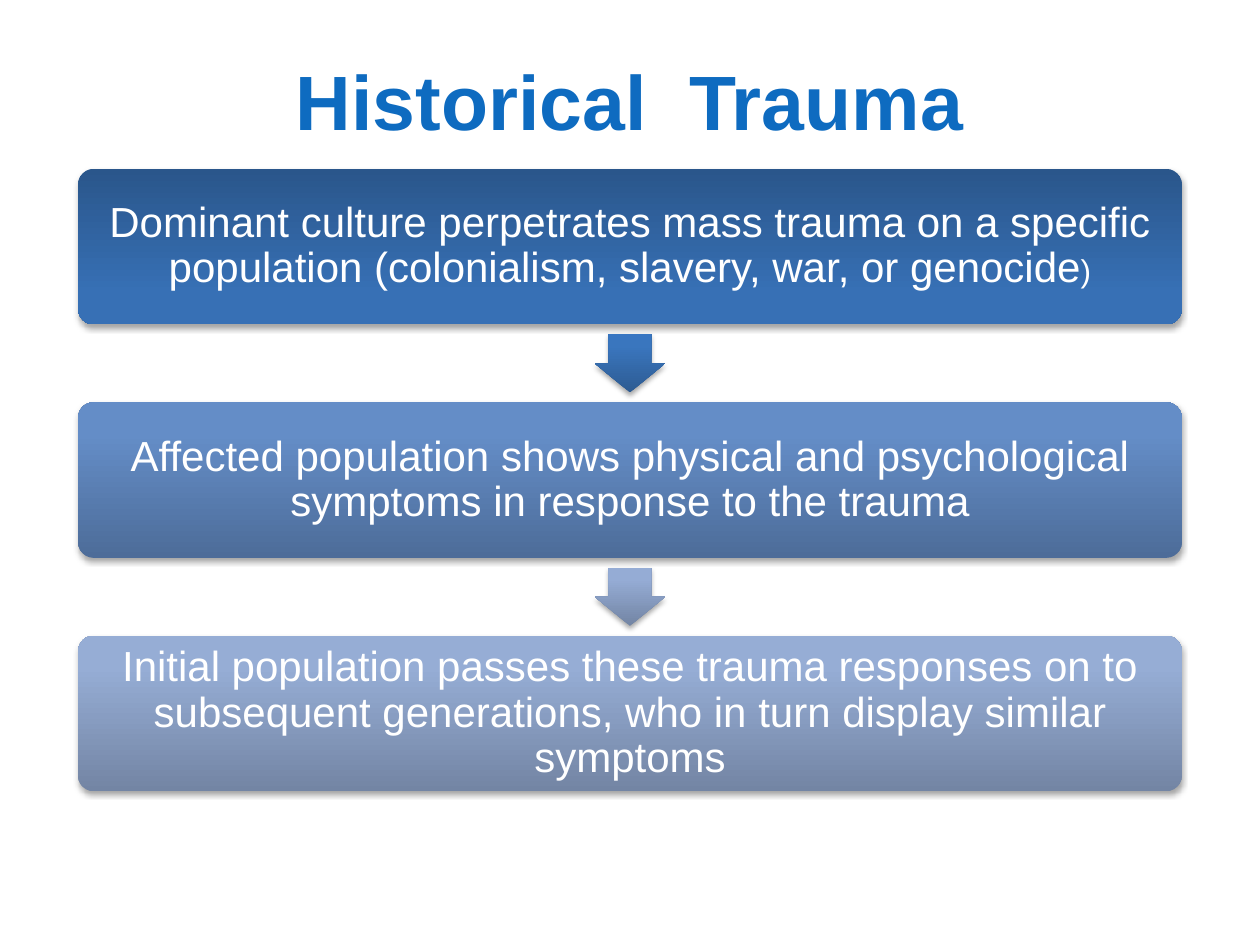
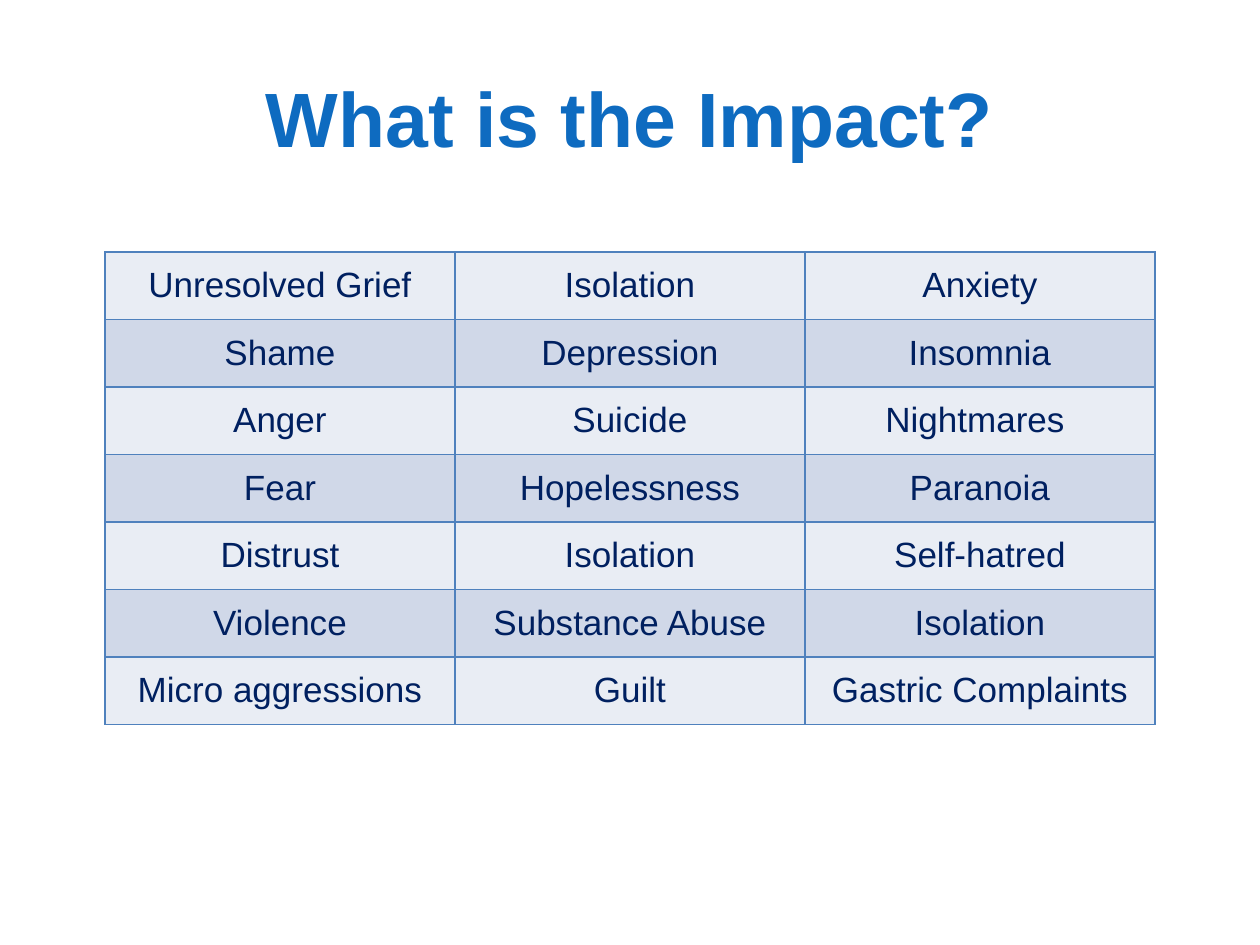
from dataclasses import dataclass

from lxml.etree import SubElement
from pptx import Presentation
from pptx.dml.color import RGBColor
from pptx.enum.shapes import MSO_SHAPE
from pptx.enum.text import MSO_ANCHOR, MSO_AUTO_SIZE, PP_ALIGN
from pptx.oxml.ns import qn
from pptx.util import Inches, Pt

SLIDE_WIDTH, SLIDE_HEIGHT = Inches(10), Inches(7.5)
GRID_COLUMNS, GRID_ROWS = 100, 75
TITLE_ONLY = 5


@dataclass(frozen=True)
class Theme:
    title: str = "0E6BC0"
    on_card: str = "FFFFFF"
    cell_text: str = "002060"
    cell_bands: tuple = ("E9EDF4", "D0D8E8")
    border: str = "4F81BD"
    shadow: str = "000000"
    font: str = "Arial"
    title_size: int = 44
    card_size: int = 24
    bracket_size: int = 18
    cell_size: int = 20


THEME = Theme()


@dataclass(frozen=True)
class Box:
    left: float
    top: float
    width: float
    height: float

    def inner(self, x, y, width, height):
        """Box inside this one, given as shares of its size."""
        return Box(self.left + x * self.width, self.top + y * self.height,
                   width * self.width, height * self.height)

    def emu(self):
        return [round(length) for length in
                (self.left, self.top, self.width, self.height)]


def grid_box(column, row, columns, rows):
    unit_x, unit_y = SLIDE_WIDTH / GRID_COLUMNS, SLIDE_HEIGHT / GRID_ROWS
    return Box(column * unit_x, row * unit_y, columns * unit_x, rows * unit_y)


def set_values(target, values):
    for name, value in values.items():
        setattr(target, name, value)


def write_runs(paragraph, runs, color, bold=False):
    paragraph.alignment = PP_ALIGN.CENTER
    for text, size in runs:
        run = paragraph.add_run()
        run.text = text
        set_values(run.font, {"name": THEME.font, "size": Pt(size), "bold": bold})
        run.font.color.rgb = RGBColor.from_string(color)


def add_titled_slide(deck, title, box):
    slide = deck.slides.add_slide(deck.slide_layouts[TITLE_ONLY])
    heading = slide.shapes.title
    set_values(heading, dict(zip(("left", "top", "width", "height"), box.emu())))
    set_values(heading.text_frame, {"vertical_anchor": MSO_ANCHOR.MIDDLE,
                                    "auto_size": MSO_AUTO_SIZE.NONE,
                                    "word_wrap": True})
    write_runs(heading.text_frame.paragraphs[0], [(title, THEME.title_size)],
               THEME.title, bold=True)
    return slide


# Shaded shapes of the trauma chain
def add_color(parent, color):
    return SubElement(parent, qn("a:srgbClr"), val=color)


def add_shaded_shape(slide, preset, box, adjustments, shades, angle):
    shape = slide.shapes.add_shape(preset, *box.emu())
    for index, value in enumerate(adjustments):
        shape.adjustments[index] = value
    shape.line.fill.background()

    shape.fill.gradient()
    shape.fill.gradient_angle = angle
    stops = shape._element.spPr.find(".//" + qn("a:gsLst"))
    for stop in list(stops):
        stops.remove(stop)
    for position, color in zip((0, 80, 100), shades):
        add_color(SubElement(stops, qn("a:gs"), pos=str(position * 1000)), color)

    shape.shadow.inherit = False
    effects = shape._element.spPr.find(qn("a:effectLst"))
    shadow = SubElement(effects, qn("a:outerShdw"), blurRad=str(Pt(3.1)),
                        dist=str(Pt(1.8)), dir="5400000", rotWithShape="0")
    SubElement(add_color(shadow, THEME.shadow), qn("a:alpha"), val="35000")
    return shape


def add_stage_card(slide, box, runs, shades, angle):
    card = add_shaded_shape(slide, MSO_SHAPE.ROUNDED_RECTANGLE, box, [0.1],
                            shades, angle)
    inset = Inches(0.14)
    set_values(card.text_frame, {
        "word_wrap": True, "vertical_anchor": MSO_ANCHOR.MIDDLE,
        "margin_left": inset, "margin_right": inset,
        "margin_top": inset, "margin_bottom": inset})
    paragraph = card.text_frame.paragraphs[0]
    paragraph.line_spacing = 0.9
    write_runs(paragraph, runs, THEME.on_card)


def add_trauma_chain(slide, box, stages, arrow_shades):
    # Each card is twice as high as the gap that holds an arrow
    row = 1 / (3 * len(stages) - 1)
    for index, (runs, shades, angle) in enumerate(stages):
        add_stage_card(slide, box.inner(0, 3 * index * row, 1, 2 * row),
                       runs, shades, angle)
    arrow_width, arrow_height = 0.064, 0.75 * row
    for index, shades in enumerate(arrow_shades):
        gap_middle = (3 * index + 2.5) * row
        arrow_box = box.inner(0.5 - arrow_width / 2, gap_middle - arrow_height / 2,
                              arrow_width, arrow_height)
        add_shaded_shape(slide, MSO_SHAPE.DOWN_ARROW, arrow_box, [0.6, 0.5],
                         shades, 90)


# Table of impacts
def add_borders(cell):
    properties = cell._tc.get_or_add_tcPr()
    for side in ("lnL", "lnR", "lnT", "lnB"):
        line = SubElement(properties, qn(f"a:{side}"), w=str(Pt(1)))
        add_color(SubElement(line, qn("a:solidFill")), THEME.border)


def add_impact_table(slide, box, impacts):
    table = slide.shapes.add_table(len(impacts), len(impacts[0]), *box.emu()).table
    set_values(table, {"first_row": False, "horz_banding": False})
    for row_index, row in enumerate(impacts):
        band = THEME.cell_bands[row_index % 2]
        for column_index, impact in enumerate(row):
            cell = table.cell(row_index, column_index)
            add_borders(cell)
            cell.fill.solid()
            cell.fill.fore_color.rgb = RGBColor.from_string(band)
            cell.vertical_anchor = MSO_ANCHOR.MIDDLE
            write_runs(cell.text_frame.paragraphs[0],
                       [(impact, THEME.cell_size)], THEME.cell_text)


STAGES = [
    ([("Dominant culture perpetrates mass trauma on a specific population "
       "(colonialism, slavery, war, or genocide", THEME.card_size),
      (")", THEME.bracket_size)],
     ("2A568B", "3770B5", "3570B8"), 270),
    ([("Affected population shows physical and psychological symptoms in "
       "response to the trauma", THEME.card_size)],
     ("4D6C99", "648DC7", "638DCA"), 90),
    ([("Initial population passes these trauma responses on to subsequent "
       "generations, who in turn display similar symptoms", THEME.card_size)],
     ("7385A4", "96ADD5", "95ADD7"), 90),
]
ARROW_SHADES = [("2D5B92", "3A76BE", "3876C2"), ("7385A4", "95ACD5", "94ADD7")]

IMPACTS = [
    ("Unresolved Grief", "Isolation", "Anxiety"),
    ("Shame", "Depression", "Insomnia"),
    ("Anger", "Suicide", "Nightmares "),
    ("Fear", "Hopelessness", "Paranoia"),
    ("Distrust", "Isolation", "Self-hatred"),
    ("Violence", "Substance Abuse", "Isolation"),
    ("Micro aggressions", "Guilt", "Gastric Complaints"),
]


def main():
    deck = Presentation()
    set_values(deck, {"slide_width": SLIDE_WIDTH, "slide_height": SLIDE_HEIGHT})

    trauma = add_titled_slide(deck, "Historical  Trauma",
                              grid_box(12.5, 2.5, 75, 10.8))
    add_trauma_chain(trauma, grid_box(6.2, 13.4, 87.6, 49.4), STAGES, ARROW_SHADES)

    impact = add_titled_slide(deck, "What is the Impact?", grid_box(5, 3, 90, 12.5))
    add_impact_table(impact, grid_box(8.33, 20, 83.33, 37.5), IMPACTS)

    deck.save("out.pptx")


if __name__ == "__main__":
    main()
